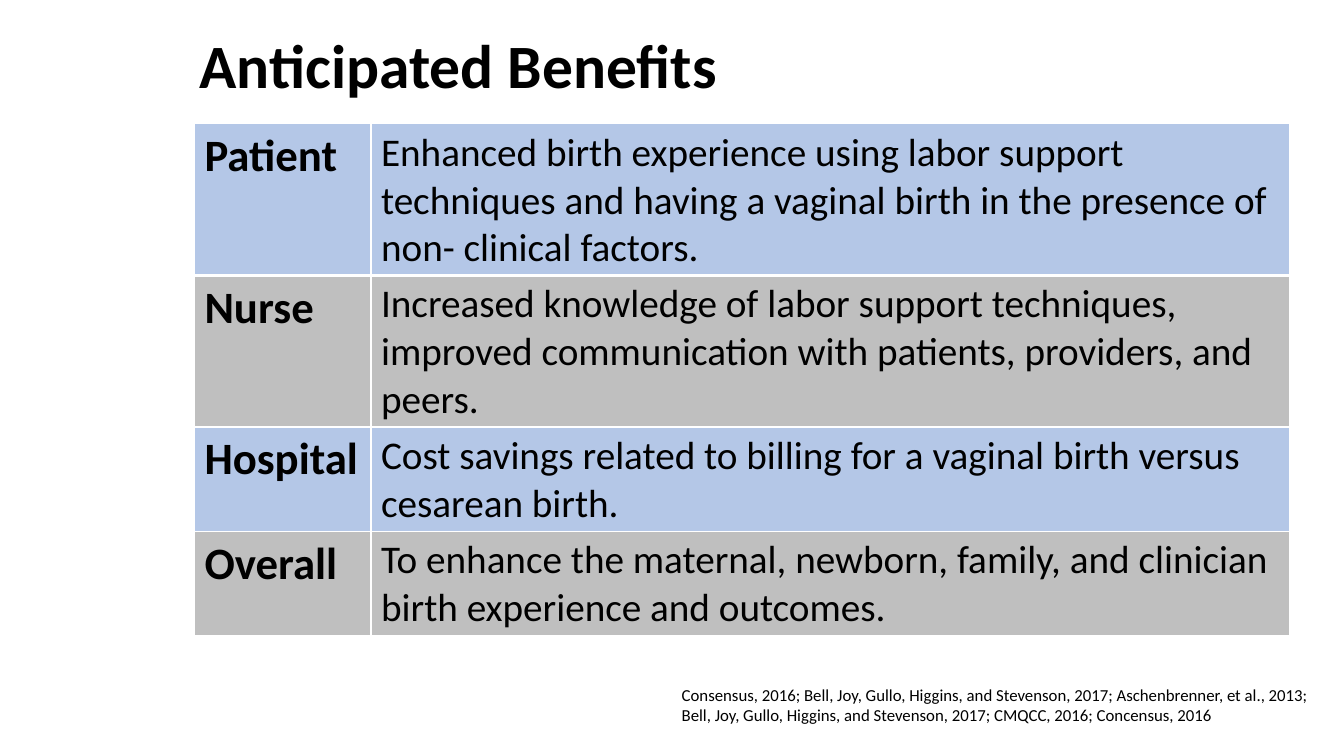
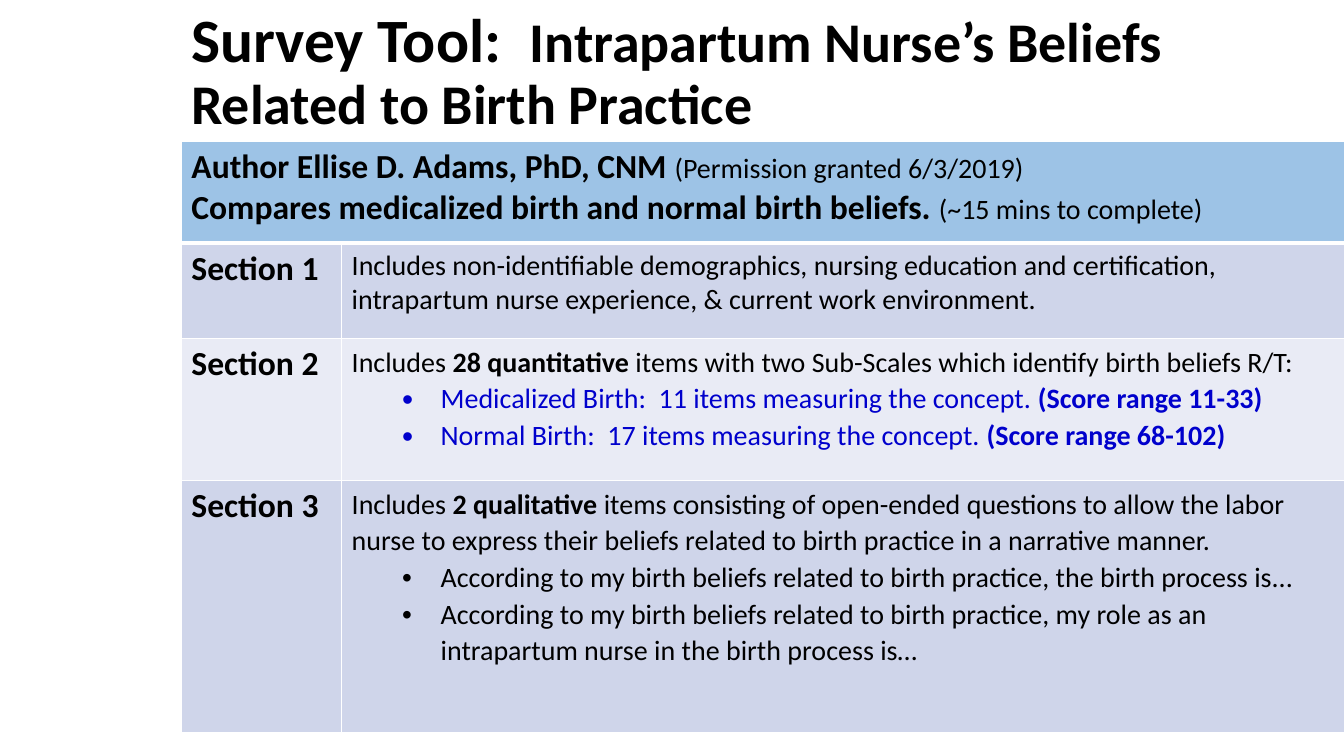
from lxml import etree
from pptx import Presentation
from pptx.dml.color import RGBColor
from pptx.enum import text
from pptx.oxml import ns
from pptx.util import Cm, Pt

FONT = "Calibri"
BLACK, WHITE, INK = "000000", "FFFFFF", "0000CC"
BLUE, GRAY, SKY, MIST, PALE = "B4C7E7", "BFBFBF", "9DC3E6", "CFD5EA", "E9EBF5"


def run(words, size=20, bold=False, tint=BLACK):
    return words, size, bold, tint


def para(*runs, gap=None, dot=None):
    return {"runs": runs, "gap": gap, "dot": dot}


def head(words, size):
    return [para(run(words, size, True))]


def gain(name, words, fill):
    return fill, [head(name, 32), [para(run(words, 28))]]


def item(*runs, dot=100):
    return para(*runs, gap=1.07, dot=dot)


SLIDES = [
    {
        "title": [run("Anticipated Benefits", 44, True)],
        "box": (4.78, 0.66, 26.77, 2.16),
        "at": (4.9, 3.12),
        "cols": [4.45, 23.14],
        "rows": [3.82, 3.82, 2.63, 2.63],
        "cells": [
            gain("Patient", "Enhanced birth experience using labor support techniques and having a vaginal birth in the presence of non- clinical factors.", BLUE),
            gain("Nurse", "Increased knowledge of labor support techniques, improved communication with patients, providers, and peers.", GRAY),
            gain("Hospital", "Cost savings related to billing for a vaginal birth versus cesarean birth.", BLUE),
            gain("Overall", "To enhance the maternal, newborn, family, and clinician birth experience and outcomes.", GRAY),
        ],
        "cite": "Consensus, 2016; Bell, Joy, Gullo, Higgins, and Stevenson, 2017; Aschenbrenner, et al., 2013; Bell, Joy, Gullo, Higgins, and Stevenson, 2017; CMQCC, 2016; Concensus, 2016",
    },
    {
        "title": [
            run("Survey Tool:  ", 44, True),
            run("Intrapartum Nurse’s Beliefs Related to Birth Practice", 40, True),
        ],
        "box": (4.57, 0, 27.48, 3.68),
        "at": (4.57, 3.56),
        "cols": [4.04, 25.27],
        "rows": [2.57, 2.39, 3.58, 6.35],
        "cells": [
            (SKY, [[
                para(run("Author Ellise D. Adams, PhD, CNM ", 24, True),
                     run("(Permission granted 6/3/2019)")),
                para(run("Compares medicalized birth and normal birth beliefs. ", 24, True),
                     run("(~15 mins to complete)")),
            ]]),
            (MIST, [head("Section 1", 24), [
                para(run("Includes non-identifiable demographics, nursing education and certification, intrapartum nurse experience, & current work environment.")),
            ]]),
            (PALE, [head("Section 2", 24), [
                para(run("Includes "), run("28 quantitative ", bold=True),
                     run("items with two Sub-Scales which identify birth beliefs R/T:"), gap=1.07),
                item(run("Medicalized Birth:  11 items measuring the concept. ", tint=INK),
                     run("(Score range 11-33)", bold=True, tint=INK), dot=113),
                item(run("Normal Birth:  17 items measuring the concept.", tint=INK),
                     run(" (Score range 68-102)", bold=True, tint=INK), dot=113),
            ]]),
            (MIST, [head("Section 3", 24), [
                para(run("Includes "), run("2 qualitative ", bold=True),
                     run("items consisting of open-ended questions to allow the labor nurse to express their beliefs related to birth practice in a narrative manner."), gap=1.07),
                item(run("According to my birth beliefs related to birth practice, the birth process is...")),
                item(run("According to my birth beliefs related to birth practice, my role as an intrapartum nurse in the birth process is…")),
            ]]),
        ],
    },
]


def color(code):
    return RGBColor.from_string(code)


def node(root, tag, **attrs):
    return etree.SubElement(root, ns.qn(tag), attrs)


def bullet(p, size):
    p.level = 1
    props = p._p.get_or_add_pPr()
    props.set("marL", str(Cm(2.24)))
    props.set("indent", str(-Cm(0.97)))
    node(props, "a:buSzPct", val=str(size * 1000))
    node(props, "a:buFont", typeface="Arial")
    node(props, "a:buChar", char="•")


def write(frame, paras):
    frame.word_wrap = True
    for i, spec in enumerate(paras):
        p = frame.add_paragraph() if i else frame.paragraphs[0]
        if spec["gap"]:
            p.line_spacing = spec["gap"]
        if spec["dot"]:
            bullet(p, spec["dot"])
        for words, size, bold, tint in spec["runs"]:
            r = p.add_run()
            r.text = words
            r.font.name = FONT
            r.font.size = Pt(size)
            r.font.bold = bold
            r.font.color.rgb = color(tint)


def label(page, box, paras, anchor):
    frame = page.shapes.add_textbox(*map(Cm, box)).text_frame
    frame.vertical_anchor = anchor
    write(frame, paras)


def edge(cell, row):
    props = cell._tc.get_or_add_tcPr()
    wide = {"T": row == 1, "B": row == 0}
    for side in "LRTB":
        width = Pt(3 if wide.get(side) else 1)
        line = node(props, "a:ln" + side, w=str(width))
        node(node(line, "a:solidFill"), "a:srgbClr", val=WHITE)


def grid(page, data):
    cols, rows = data["cols"], data["rows"]
    size = sum(cols), sum(rows)
    table = page.shapes.add_table(len(rows), len(cols), *map(Cm, data["at"] + size)).table
    for col, width in zip(table.columns, cols):
        col.width = Cm(width)
    for y, (fill, parts) in enumerate(data["cells"]):
        table.rows[y].height = Cm(rows[y])
        for x in range(len(cols)):
            cell = table.cell(y, x)
            edge(cell, y)
            cell.fill.solid()
            cell.fill.fore_color.rgb = color(fill)
        if len(parts) < len(cols):
            table.cell(y, 0).merge(table.cell(y, len(cols) - 1))
        for x, paras in enumerate(parts):
            write(table.cell(y, x).text_frame, paras)


def main():
    deck = Presentation()
    deck.slide_width, deck.slide_height = Cm(33.87), Cm(19.05)
    for data in SLIDES:
        page = deck.slides.add_slide(deck.slide_layouts[6])
        label(page, data["box"], [para(*data["title"], gap=0.9)], text.MSO_ANCHOR.MIDDLE)
        if "cite" in data:
            label(page, (16.93, 17.12, 16.93, 1.28), [para(run(data["cite"], 12))], text.MSO_ANCHOR.TOP)
        grid(page, data)
    deck.save("out.pptx")


if __name__ == "__main__":
    main()
